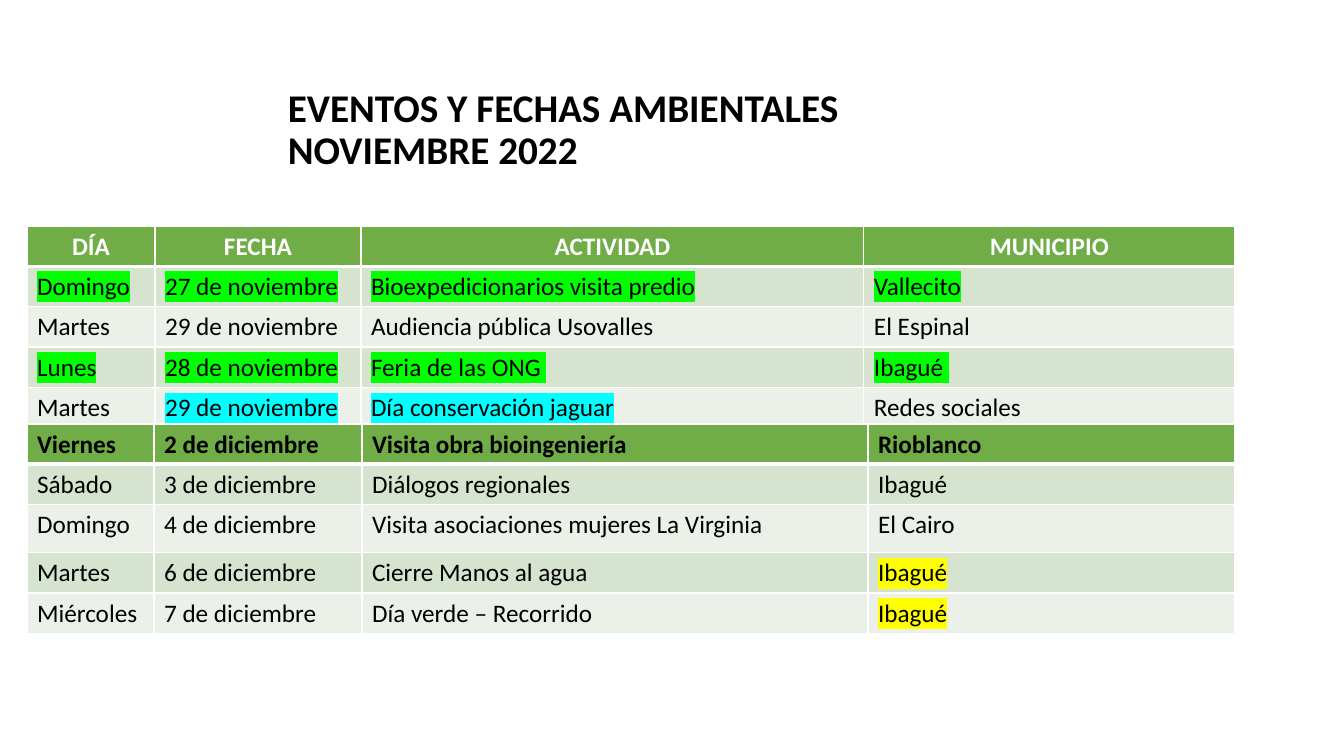
from lxml import etree
from pptx import Presentation
from pptx.dml.color import RGBColor
from pptx.enum.text import MSO_ANCHOR, PP_ALIGN
from pptx.oxml.ns import qn
from pptx.util import Pt

PX = 914400 / 100.8
FONT = "Calibri"

BLACK = RGBColor(0x00, 0x00, 0x00)
WHITE = RGBColor(0xFF, 0xFF, 0xFF)
HEADER_GREEN = RGBColor(0x70, 0xAD, 0x47)
BANDS = (RGBColor(0xD5, 0xE3, 0xCF), RGBColor(0xEB, 0xF1, 0xE9))
LIME = RGBColor(0x00, 0xFF, 0x00)
CYAN = RGBColor(0x00, 0xFF, 0xFF)
YELLOW = RGBColor(0xFF, 0xFF, 0x00)

LEFT, CENTER = PP_ALIGN.LEFT, PP_ALIGN.CENTER
MIDDLE = MSO_ANCHOR.MIDDLE

TITLE = "EVENTOS Y FECHAS AMBIENTALES\vNOVIEMBRE 2022"

NOVEMBER_EVENTS = [
    ("DÍA", "FECHA", "ACTIVIDAD", "MUNICIPIO"),
    ("Domingo", "27 de noviembre", "Bioexpedicionarios visita predio", "Vallecito"),
    ("Martes", "29 de noviembre", "Audiencia pública Usovalles", "El Espinal"),
    ("Lunes", "28 de noviembre", "Feria de las ONG ", "Ibagué "),
    ("Martes", "29 de noviembre", "Día conservación jaguar", "Redes sociales"),
]
# Highlights are keyed by row, one colour per column.
NOVEMBER_HIGHLIGHTS = {
    1: (LIME,) * 4,
    3: (LIME,) * 4,
    4: (None, CYAN, CYAN, None),
}

DECEMBER_EVENTS = [
    ("Viernes", "2 de diciembre", "Visita obra bioingeniería", "Rioblanco"),
    ("Sábado", "3 de diciembre", "Diálogos regionales", "Ibagué"),
    ("Domingo", "4 de diciembre", "Visita asociaciones mujeres La Virginia", "El Cairo"),
    ("Martes", "6 de diciembre", "Cierre Manos al agua", "Ibagué"),
    ("Miércoles", "7 de diciembre", "Día verde – Recorrido", "Ibagué"),
]
DECEMBER_HIGHLIGHTS = {row: (None, None, None, YELLOW) for row in (3, 4)}


def px(length):
    return round(length * PX)


def add_solid_color(parent, color):
    fill = etree.SubElement(parent, qn("a:solidFill"))
    etree.SubElement(fill, qn("a:srgbClr"), val=str(color))


def format_run(run, size, color, bold, highlight=None):
    font = run.font
    font.size = Pt(size)
    font.bold = bold
    font.color.rgb = color
    if highlight is not None:
        mark = etree.SubElement(font._element, qn("a:highlight"))
        etree.SubElement(mark, qn("a:srgbClr"), val=str(highlight))
    font.name = FONT


def add_borders(cell, top, bottom):
    """Draw white borders; must run before the cell is filled."""
    properties = cell._tc.get_or_add_tcPr()
    for side, width in (("L", 1), ("R", 1), ("T", top), ("B", bottom)):
        line = etree.SubElement(properties, qn(f"a:ln{side}"), w=str(Pt(width)))
        add_solid_color(line, WHITE)


def add_title(slide, left, top, width, height):
    frame = slide.shapes.add_textbox(px(left), px(top), px(width), px(height)).text_frame
    frame.word_wrap = True
    frame.vertical_anchor = MIDDLE
    frame.text = TITLE
    heading = frame.paragraphs[0]
    heading.line_spacing = 0.9
    for run in heading.runs:
        format_run(run, 28, BLACK, True)


def add_events_table(slide, left, top, columns, heights, events, highlights,
                     header_color, header_align):
    table = slide.shapes.add_table(
        len(events), len(columns), px(left), px(top), px(sum(columns)), px(sum(heights))
    ).table
    for column, width in zip(table.columns, columns):
        column.width = px(width)
    for row, height in zip(table.rows, heights):
        row.height = px(height)

    for row_index, event in enumerate(events):
        is_header = row_index == 0
        marks = highlights.get(row_index, (None,) * len(event))
        for column_index, (text, mark) in enumerate(zip(event, marks)):
            cell = table.cell(row_index, column_index)
            add_borders(cell, 3 if row_index == 1 else 1, 3 if is_header else 1)
            cell.fill.solid()
            cell.fill.fore_color.rgb = HEADER_GREEN if is_header else BANDS[(row_index - 1) % 2]
            cell.text_frame.text = text
            entry = cell.text_frame.paragraphs[0]
            entry.alignment = header_align if is_header else LEFT
            format_run(entry.runs[0], 18, header_color if is_header else BLACK, is_header, mark)


def main():
    deck = Presentation()
    deck.slide_width, deck.slide_height = px(1344), px(756)
    slide = deck.slides.add_slide(deck.slide_layouts[6])
    add_title(slide, 278, 92, 963, 78)
    add_events_table(slide, 27, 226, (128, 206, 503, 371), (38,) * 5,
                     NOVEMBER_EVENTS, NOVEMBER_HIGHLIGHTS, WHITE, CENTER)
    add_events_table(slide, 27, 424, (127, 208, 506, 367), (38, 35, 48, 36, 41),
                     DECEMBER_EVENTS, DECEMBER_HIGHLIGHTS, BLACK, LEFT)
    deck.save("out.pptx")


if __name__ == "__main__":
    main()
